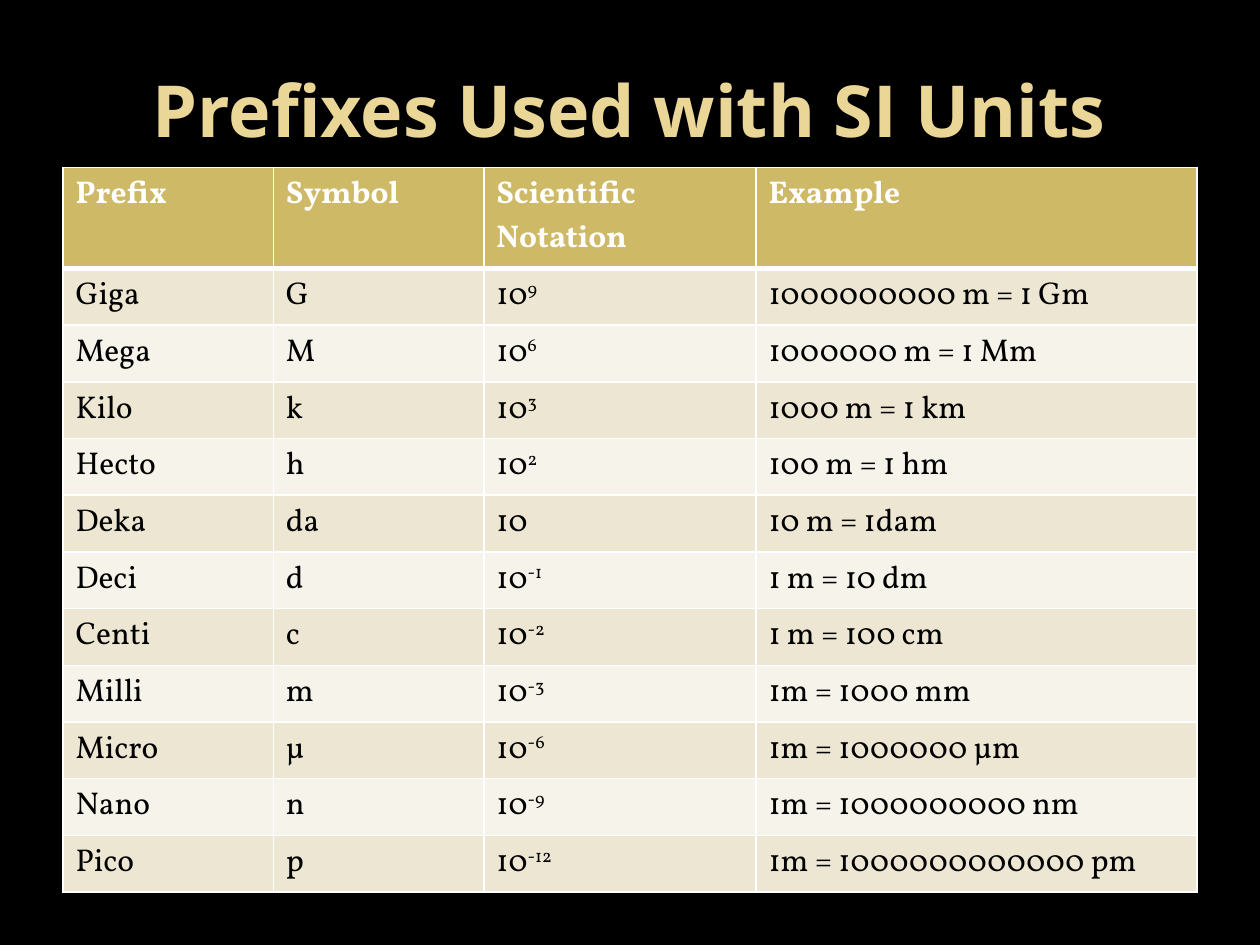
from dataclasses import dataclass

from lxml import etree
from pptx import Presentation
from pptx.dml.color import RGBColor
from pptx.enum.text import MSO_ANCHOR, PP_ALIGN
from pptx.oxml.ns import qn
from pptx.util import Inches, Pt

CENTER = PP_ALIGN.CENTER
MIDDLE = MSO_ANCHOR.MIDDLE


@dataclass(frozen=True)
class Theme:
    background: str = "000000"
    title: str = "EAD696"
    header: str = "CEB966"
    header_text: str = "FFFFFF"
    body_text: str = "000000"
    bands: tuple = ("EDE6D3", "F6F3EA")
    border: str = "FFFFFF"
    title_font: str = "Open Sans"
    table_font: str = "Vollkorn"
    title_size: int = 41
    table_size: int = 18
    thin: int = 1
    thick: int = 3


THEME = Theme()

COLUMN_WIDTHS = (1.67, 1.67, 2.16, 3.5)
HEADER_HEIGHT = 0.8
ROW_HEIGHT = 0.45
HEADINGS = ("Prefix", "Symbol", "Scientific Notation", "Example")

# Prefix, symbol, exponent of ten, example
PREFIXES = (
    ("Giga", "G", "9", "1000000000 m = 1 Gm"),
    ("Mega", "M", "6", "1000000 m = 1 Mm"),
    ("Kilo", "k", "3", "1000 m = 1 km"),
    ("Hecto", "h", "2", "100 m = 1 hm"),
    ("Deka", "da", "", "10 m = 1dam"),
    ("Deci", "d", "-1", "1 m = 10 dm"),
    ("Centi", "c", "-2", "1 m = 100 cm"),
    ("Milli", "m", "-3", "1m = 1000 mm"),
    ("Micro", "µ", "-6", "1m = 1000000 µm"),
    ("Nano", "n", "-9", "1m = 1000000000 nm"),
    ("Pico", "p", "-12", "1m = 1000000000000 pm"),
)


def format_run(r, font, size, color, bold=False):
    r.font.name = font
    r.font.size = Pt(size)
    r.font.bold = bold
    r.font.color.rgb = RGBColor.from_string(color)


def add_title(s, text):
    sp = s.shapes.add_textbox(Inches(0.5), Inches(0.3), Inches(9), Inches(1.12))
    tf = sp.text_frame
    tf.word_wrap = True
    tf.vertical_anchor = MIDDLE
    tf.text = text
    p = tf.paragraphs[0]
    p.alignment = CENTER
    format_run(p.runs[0], THEME.title_font, THEME.title_size, THEME.title, True)


def set_borders(cell, top, bottom):
    tc_pr = cell._tc.get_or_add_tcPr()
    widths = {"lnL": THEME.thin, "lnR": THEME.thin, "lnT": top, "lnB": bottom}
    for side, width in widths.items():
        ln = etree.SubElement(tc_pr, qn(f"a:{side}"), w=str(Pt(width)))
        fill = etree.SubElement(ln, qn("a:solidFill"))
        etree.SubElement(fill, qn("a:srgbClr"), val=THEME.border)


def fill_cell(cell, text, row, exponent=""):
    is_header = row == 0
    # Borders come before the fill in the cell properties
    set_borders(
        cell,
        top=THEME.thick if row == 1 else THEME.thin,
        bottom=THEME.thick if is_header else THEME.thin,
    )
    band = THEME.header if is_header else THEME.bands[(row - 1) % 2]
    cell.fill.solid()
    cell.fill.fore_color.rgb = RGBColor.from_string(band)

    # Text, with the exponent raised
    cell.text_frame.text = text
    p = cell.text_frame.paragraphs[0]
    if exponent:
        r = p.add_run()
        r.text = exponent
        r.font._element.set("baseline", "30000")
    color = THEME.header_text if is_header else THEME.body_text
    for r in p.runs:
        format_run(r, THEME.table_font, THEME.table_size, color, is_header)


def add_prefix_table(s):
    height = HEADER_HEIGHT + len(PREFIXES) * ROW_HEIGHT
    table = s.shapes.add_table(
        len(PREFIXES) + 1, len(HEADINGS), Inches(0.5), Inches(1.33),
        Inches(sum(COLUMN_WIDTHS)), Inches(height),
    ).table
    for column, width in zip(table.columns, COLUMN_WIDTHS):
        column.width = Inches(width)
    for i, row in enumerate(table.rows):
        row.height = Inches(ROW_HEIGHT if i else HEADER_HEIGHT)

    # Header row
    for col, heading in enumerate(HEADINGS):
        fill_cell(table.cell(0, col), heading, 0)

    # One row for each prefix
    for row, (prefix, symbol, exponent, example) in enumerate(PREFIXES, 1):
        fill_cell(table.cell(row, 0), prefix, row)
        fill_cell(table.cell(row, 1), symbol, row)
        fill_cell(table.cell(row, 2), "10", row, exponent)
        fill_cell(table.cell(row, 3), example, row)


def main():
    prs = Presentation()
    prs.slide_width, prs.slide_height = Inches(10), Inches(7.5)
    s = prs.slides.add_slide(prs.slide_layouts[6])
    s.background.fill.solid()
    s.background.fill.fore_color.rgb = RGBColor.from_string(THEME.background)
    add_title(s, "Prefixes Used with SI Units")
    add_prefix_table(s)
    prs.save("out.pptx")


if __name__ == "__main__":
    main()
